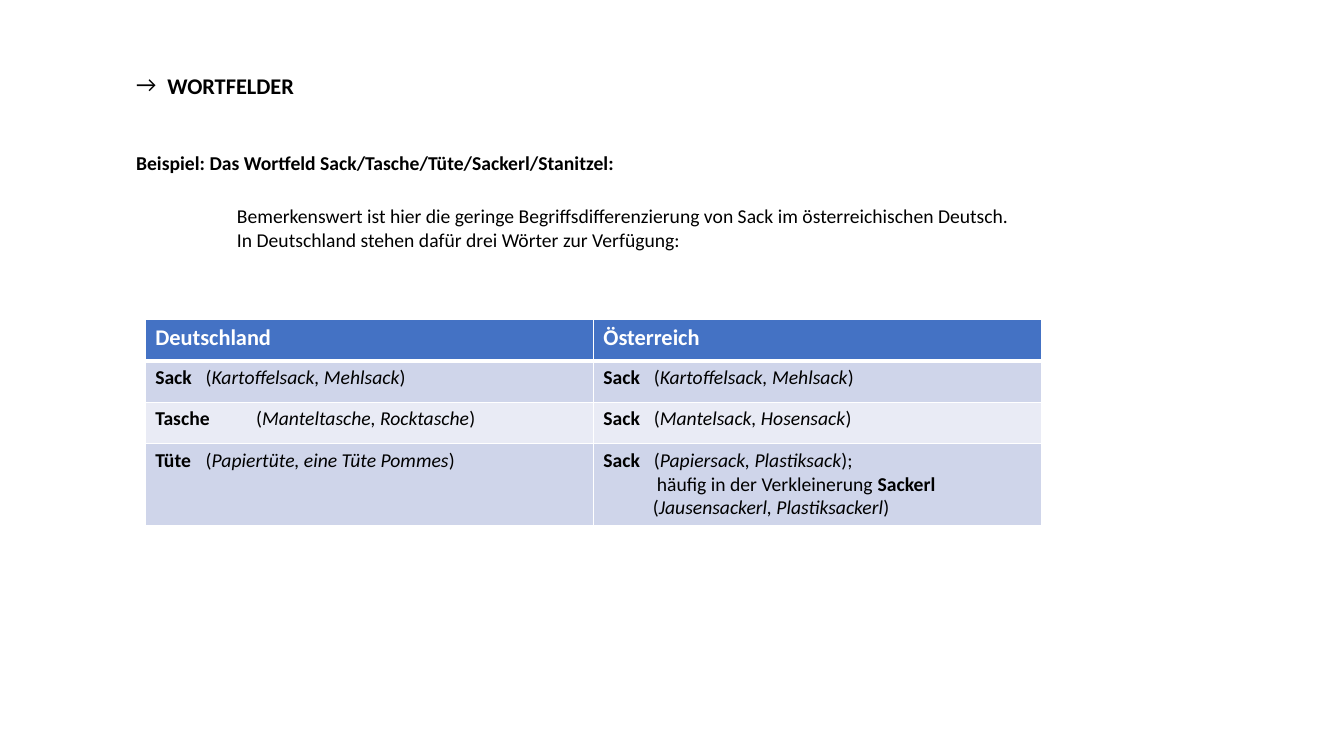
import dataclasses

import lxml.etree
import pptx
import pptx.dml.color
import pptx.enum.text
import pptx.oxml.ns
import pptx.util


@dataclasses.dataclass(frozen=True)
class Theme:
    font: str = "Calibri"
    ink: str = "000000"
    white: str = "FFFFFF"
    header: str = "4472C4"
    bands: tuple = ("CFD5EA", "E9EBF5")
    heading_size: int = 16
    text_size: int = 14
    thin: int = 1
    thick: int = 3


THEME = Theme()
WIDTH, HEIGHT = 13.33, 7.5
inches = pptx.util.Inches


def color(value):
    return pptx.dml.color.RGBColor.from_string(value)


def add_child(parent, tag, **attributes):
    child = lxml.etree.SubElement(parent, pptx.oxml.ns.qn(tag))
    for name, value in attributes.items():
        child.set(name, str(value))
    return child


def write_para(para, spans, size=THEME.text_size, ink=THEME.ink, before=0,
               indent=0, bullet=None, tab=None):
    """Fill a paragraph with (text, style) spans; b is bold, i is italic."""
    para.alignment = pptx.enum.text.PP_ALIGN.LEFT
    para.space_before = pptx.util.Pt(before)
    para.space_after = pptx.util.Pt(0)
    para.line_spacing = 1.0
    properties = para._p.get_or_add_pPr()
    properties.set("marL", str(inches(indent)))
    properties.set("indent", str(-inches(indent) if bullet else 0))
    if bullet:
        add_child(properties, "a:buFont", typeface=THEME.font)
        add_child(properties, "a:buChar", char=bullet)
    else:
        add_child(properties, "a:buNone")
    if tab:
        stops = add_child(properties, "a:tabLst")
        add_child(stops, "a:tab", pos=inches(tab), algn="l")
    for text, style in spans:
        span = para.add_run()
        span.text = text
        span.font.name = THEME.font
        span.font.size = pptx.util.Pt(size)
        span.font.color.rgb = color(ink)
        span.font.bold = "b" in style
        span.font.italic = "i" in style


def place(shape, box, anchor):
    shape.left, shape.top, shape.width, shape.height = map(inches, box)
    frame = shape.text_frame
    frame.word_wrap = True
    frame.auto_size = pptx.enum.text.MSO_AUTO_SIZE.NONE
    frame.vertical_anchor = anchor
    return frame


def write_heading(page, box):
    frame = place(page.shapes.title, box, pptx.enum.text.MSO_ANCHOR.MIDDLE)
    write_para(frame.paragraphs[0], [("WORTFELDER", "b")],
               size=THEME.heading_size, indent=0.31, bullet="→")


def write_intro(page, box):
    frame = place(page.placeholders[1], box, pptx.enum.text.MSO_ANCHOR.TOP)
    write_para(frame.paragraphs[0],
               [("Beispiel: Das Wortfeld Sack/Tasche/Tüte/Sackerl/Stanitzel:", "b")])
    remarks = (
        ("Bemerkenswert ist hier die geringe Begriffsdifferenzierung "
         "von Sack im österreichischen Deutsch.", 21),
        ("In Deutschland stehen dafür drei Wörter zur Verfügung:", 0),
    )
    for text, before in remarks:
        write_para(frame.add_paragraph(), [(text, "")], before=before, indent=1)


def bracketed(examples, end=")"):
    return [("(", ""), (examples, "i"), (end, "")]


def entry(word, examples, end=")"):
    return [(word, "b"), ("\t", "")] + bracketed(examples, end)


def set_border(cell, side, width):
    line = add_child(cell._tc.get_or_add_tcPr(), "a:ln" + side,
                     w=pptx.util.Pt(width))
    add_child(add_child(line, "a:solidFill"), "a:srgbClr", val=THEME.white)


def fill_cell(cell, fill, top, bottom):
    for side, width in (("L", THEME.thin), ("R", THEME.thin),
                        ("T", top), ("B", bottom)):
        set_border(cell, side, width)
    cell.fill.solid()
    cell.fill.fore_color.rgb = color(fill)


def add_word_table(page, box):
    headings = ("Deutschland", "Österreich")
    entries = (
        (entry("Sack", "Kartoffelsack, Mehlsack"),
         entry("Sack", "Kartoffelsack, Mehlsack")),
        (entry("Tasche", "Manteltasche, Rocktasche"),
         entry("Sack", "Mantelsack, Hosensack")),
        (entry("Tüte", "Papiertüte, eine Tüte Pommes"),
         entry("Sack", "Papiersack, Plastiksack", ");")),
    )
    example_tabs = (0.63, 0.54)
    left, top, width, height = box
    table = page.shapes.add_table(
        len(entries) + 1, len(headings), *map(inches, box)).table
    for column in table.columns:
        column.width = inches(width / len(headings))

    # The last row takes the height that the single-line rows leave
    line_row = 0.41
    for row in table.rows:
        row.height = inches(line_row)
    table.rows[len(entries)].height = inches(height - line_row * len(entries))

    # Header row
    for index, heading in enumerate(headings):
        cell = table.cell(0, index)
        fill_cell(cell, THEME.header, THEME.thin, THEME.thick)
        write_para(cell.text_frame.paragraphs[0], [(heading, "b")],
                   size=THEME.heading_size, ink=THEME.white)

    # Banded word rows
    for number, row_entries in enumerate(entries):
        for index, spans in enumerate(row_entries):
            cell = table.cell(number + 1, index)
            fill_cell(cell, THEME.bands[number % 2],
                      THEME.thin if number else THEME.thick, THEME.thin)
            write_para(cell.text_frame.paragraphs[0], spans,
                       tab=example_tabs[index])

    # Diminutive under the last Austrian word
    frame = table.cell(len(entries), 1).text_frame
    write_para(frame.add_paragraph(),
               [("häufig in der Verkleinerung ", ""), ("Sackerl", "b")],
               indent=0.53)
    write_para(frame.add_paragraph(),
               bracketed("Jausensackerl, Plastiksackerl"), indent=0.49)


def main():
    deck = pptx.Presentation()
    deck.slide_width, deck.slide_height = inches(WIDTH), inches(HEIGHT)
    page = deck.slides.add_slide(deck.slide_layouts[1])
    write_heading(page, (1.25, 0.67, 9.98, 0.35))
    write_intro(page, (1.25, 1.45, 9.98, 1.2))
    add_word_table(page, (1.44, 3.17, 8.89, 2.03))
    deck.save("out.pptx")


if __name__ == "__main__":
    main()
